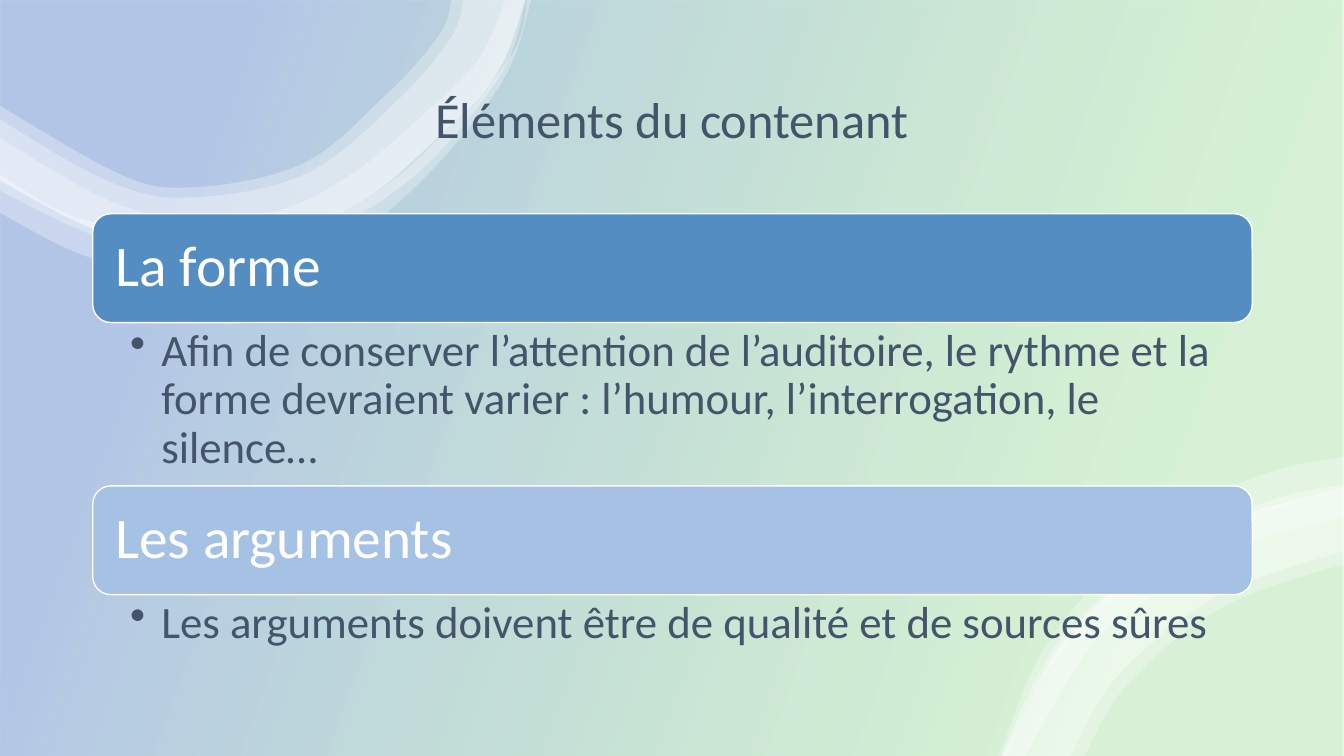
from dataclasses import dataclass
from typing import NamedTuple

from lxml import etree
from pptx import Presentation
from pptx.dml.color import RGBColor
from pptx.enum.shapes import MSO_SHAPE
from pptx.enum.text import MSO_ANCHOR, PP_ALIGN
from pptx.oxml.ns import qn
from pptx.util import Pt

LEFT, CENTER, JUSTIFY = PP_ALIGN.LEFT, PP_ALIGN.CENTER, PP_ALIGN.JUSTIFY
TOP, MIDDLE = MSO_ANCHOR.TOP, MSO_ANCHOR.MIDDLE
RECTANGLE, ROUNDED = MSO_SHAPE.RECTANGLE, MSO_SHAPE.ROUNDED_RECTANGLE
EMU_PER_PX = 9144  # 100 px to the inch
PAGE_WIDTH, PAGE_HEIGHT = 1333, 750


@dataclass(frozen=True)
class Theme:
    font: str = "Calibri"
    ink: str = "44546A"
    white: str = "FFFFFF"
    green: str = "3EC034"
    blue: str = "4472C4"
    title_size: int = 36
    bar_size: int = 41
    body_size: int = 32


THEME = Theme()
Point = tuple[int, int]
Edge = list[Point]


class Box(NamedTuple):
    left: int
    top: int
    width: int
    height: int


class Ribbon(NamedTuple):
    """A band between two smooth edges, the second running back."""
    out: Edge
    back: Edge


class Topic(NamedTuple):
    heading: str
    detail: str
    bar_color: str
    top: int
    detail_height: int
    align: PP_ALIGN


# Ribbon edges shared by two bands
TOP_BACK: Edge = [(-2, 178), (93, 227), (187, 244), (337, 212), (445, 126), (495, 69), (521, -1)]
BOTTOM_OUT: Edge = [(994, 751), (1052, 640), (1126, 569), (1219, 516), (1334, 484)]

TOP_RIBBONS = [
    Ribbon([(523, -1), (510, 50), (455, 116), (392, 177), (315, 221), (193, 240), (75, 215),
            (-2, 172)],
           [(-2, 210), (88, 255), (185, 271), (298, 256), (360, 229), (430, 167), (501, 76),
            (527, -1)]),
    Ribbon([(502, -1), (474, 60), (425, 109), (354, 169), (282, 207), (195, 217), (113, 201),
            (-2, 136)],
           [(-2, 188), (95, 234), (187, 249), (294, 234), (356, 213), (429, 158), (498, 72),
            (522, -1)]),
    Ribbon([(460, -1), (447, 38), (395, 99), (302, 173), (187, 196), (108, 180), (-2, 117)],
           TOP_BACK),
    Ribbon([(448, -1), (436, 34), (384, 93), (299, 163), (187, 186), (115, 171), (-2, 104)],
           TOP_BACK),
]
BOTTOM_RIBBONS = [
    Ribbon([(991, 750), (1039, 638), (1134, 534), (1246, 473), (1334, 453)],
           [(1334, 485), (1211, 524), (1099, 598), (1033, 674), (997, 750)]),
    Ribbon(BOTTOM_OUT, [(1334, 559), (1213, 602), (1119, 678), (1075, 751)]),
    Ribbon([(993, 750), (1047, 640), (1146, 549), (1255, 498), (1334, 480)],
           [(1334, 513), (1221, 546), (1114, 612), (1071, 657), (1017, 750)]),
    Ribbon(BOTTOM_OUT, [(1334, 546), (1207, 591), (1109, 670), (1062, 750)]),
]
TOPICS = [
    Topic("La forme", "Afin de conserver l’attention de l’auditoire, le rythme et la forme "
          "devraient varier : l’humour, l’interrogation, le silence…",
          "538DC1", 212, 162, LEFT),
    Topic("Les arguments", "Les arguments doivent être de qualité et de sources sûres",
          "A5C1E3", 482, 74, JUSTIFY),
]


def emu(px: int) -> int:
    return px * EMU_PER_PX


def rgb(color: str) -> RGBColor:
    return RGBColor.from_string(color)


def set_opacity(shape, *percents: int) -> None:
    """Give each colour of the shape's fill its opacity, in order."""
    for color, percent in zip(shape.element.spPr.iter(qn("a:srgbClr")), percents):
        etree.SubElement(color, qn("a:alpha")).set("val", str(percent * 1000))


def curve_handles(edge: Edge) -> list[tuple[Point, Point]]:
    """Return the two Bézier handles of each step of a smooth curve through the edge."""
    padded = [edge[0], *edge, edge[-1]]
    return [((round(b[0] + (c[0] - a[0]) / 6), round(b[1] + (c[1] - a[1]) / 6)),
             (round(c[0] - (d[0] - b[0]) / 6), round(c[1] - (d[1] - b[1]) / 6)))
            for a, b, c, d in zip(padded, padded[1:], padded[2:], padded[3:])]


def draw_ribbon(page, ribbon: Ribbon) -> None:
    corners = ribbon.out + ribbon.back
    builder = page.shapes.build_freeform(*corners[0], scale=EMU_PER_PX)
    builder.add_line_segments(corners[1:], close=True)
    shape = builder.convert_to_shape()
    shape.shadow.inherit = False
    shape.fill.solid()
    shape.fill.fore_color.rgb = rgb(THEME.white)
    set_opacity(shape, 30)
    shape.line.fill.background()

    # Bend every segment but the one that joins the two edges
    left, top = min(x for x, _ in corners), min(y for _, y in corners)
    segments = list(shape.element.iter(qn("a:lnTo")))
    join = len(ribbon.out) - 1
    bends = segments[:join] + segments[join + 1:]
    handles = curve_handles(ribbon.out) + curve_handles(ribbon.back)
    for segment, pair in zip(bends, handles):
        segment.tag = qn("a:cubicBezTo")
        for index, (x, y) in enumerate(pair):
            handle = etree.Element(qn("a:pt"), x=str(x - left), y=str(y - top))
            segment.insert(index, handle)


def draw_shape(page, kind: MSO_SHAPE, box: Box):
    shape = page.shapes.add_shape(kind, *map(emu, box))
    shape.shadow.inherit = False
    return shape


def write_text(shape, text: str, *, size: int, color: str, align: PP_ALIGN = LEFT,
               anchor: MSO_ANCHOR = MIDDLE, insets: tuple[int, ...] = (10, 5, 10, 5),
               bullet_indent: int = 0) -> None:
    """Set one paragraph; insets run left, top, right, bottom."""
    frame = shape.text_frame
    frame.word_wrap = True
    frame.vertical_anchor = anchor
    (frame.margin_left, frame.margin_top,
     frame.margin_right, frame.margin_bottom) = map(emu, insets)
    para = frame.paragraphs[0]
    para.alignment = align
    para.line_spacing = 0.9
    if bullet_indent:
        properties = para._p.get_or_add_pPr()
        properties.set("marL", str(emu(bullet_indent)))
        properties.set("indent", str(-emu(bullet_indent)))
        etree.SubElement(properties, qn("a:buChar")).set("char", "•")
    span = para.add_run()
    span.text = text
    span.font.name, span.font.size, span.font.color.rgb = THEME.font, Pt(size), rgb(color)


def draw_background(page) -> None:
    shape = draw_shape(page, RECTANGLE, Box(0, 0, PAGE_WIDTH, PAGE_HEIGHT))
    shape.line.fill.background()
    shape.fill.gradient()
    shape.fill.gradient_angle = 160
    stops = ((0.16, THEME.green), (0.85, THEME.blue))
    for stop, (position, color) in zip(shape.fill.gradient_stops, stops):
        stop.position, stop.color.rgb = position, rgb(color)
    set_opacity(shape, 20, 40)


def draw_topic(page, topic: Topic) -> None:
    bar_box = Box(92, topic.top, 1150, 108)
    bar = draw_shape(page, ROUNDED, bar_box)
    bar.fill.solid()
    bar.fill.fore_color.rgb = rgb(topic.bar_color)
    bar.line.color.rgb, bar.line.width = rgb(THEME.white), Pt(1)
    write_text(bar, topic.heading, size=THEME.bar_size, color=THEME.white,
               insets=(17, 17, 17, 17))
    detail_box = bar_box._replace(top=topic.top + bar_box.height - 1, height=topic.detail_height)
    detail = page.shapes.add_textbox(*map(emu, detail_box))
    write_text(detail, topic.detail, size=THEME.body_size, color=THEME.ink, align=topic.align,
               anchor=TOP, insets=(37, 6, 32, 6), bullet_indent=31)


def main() -> None:
    deck = Presentation()
    deck.slide_width, deck.slide_height = emu(PAGE_WIDTH), emu(PAGE_HEIGHT)
    page = deck.slides.add_slide(deck.slide_layouts[6])

    # Backdrop and title
    draw_background(page)
    for ribbon in TOP_RIBBONS:
        draw_ribbon(page, ribbon)
    title = page.shapes.add_textbox(*map(emu, Box(352, 73, 629, 96)))
    write_text(title, "Éléments du contenant", size=THEME.title_size, color=THEME.ink,
               align=CENTER)

    # Lower ribbons and topics
    for ribbon in BOTTOM_RIBBONS:
        draw_ribbon(page, ribbon)
    for topic in TOPICS:
        draw_topic(page, topic)

    deck.save("out.pptx")


if __name__ == "__main__":
    main()
